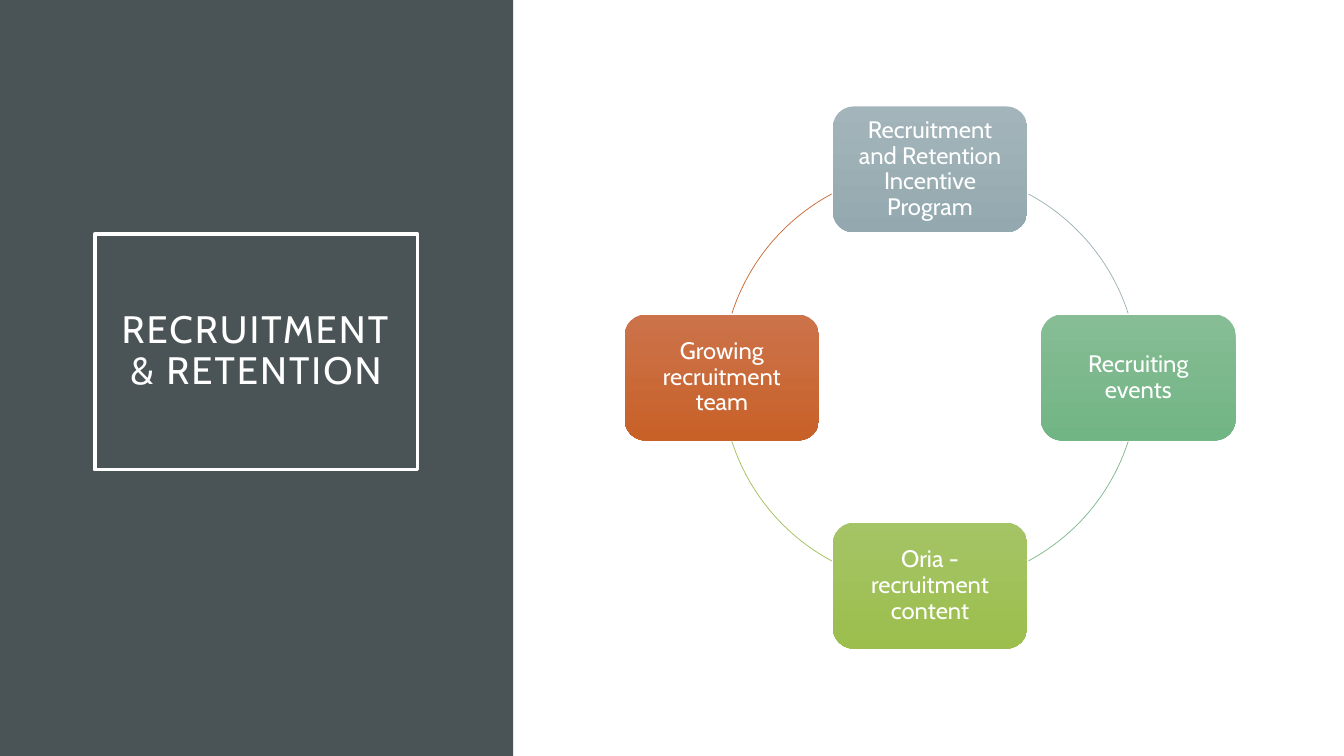
from pptx import Presentation
from pptx.dml.color import RGBColor
from pptx.enum.shapes import MSO_SHAPE
from pptx.enum.text import MSO_ANCHOR, MSO_AUTO_SIZE, PP_ALIGN
from pptx.oxml.ns import qn
from pptx.util import Inches, Pt


def color(value):
    return RGBColor.from_string(value)


def write(shape, text, size, inset):
    frame = shape.text_frame
    frame.text = text
    frame.word_wrap = True
    frame.auto_size = MSO_AUTO_SIZE.NONE
    frame.vertical_anchor = MSO_ANCHOR.MIDDLE
    frame.margin_left = frame.margin_right = Inches(inset)
    frame.margin_top = frame.margin_bottom = Inches(inset)
    para = frame.paragraphs[0]
    para.alignment = PP_ALIGN.CENTER
    para.line_spacing = 0.9
    font = para.runs[0].font
    font.name = "Cabin"
    font.size = Pt(size)
    font.color.rgb = color("FFFFFF")


deck = Presentation()
deck.slide_width = Inches(13.33)
deck.slide_height = Inches(7.5)
page = deck.slides.add_slide(deck.slide_layouts[5])
shapes = page.shapes

panel = shapes.add_shape(MSO_SHAPE.RECTANGLE, 0, 0, Inches(5.09), Inches(7.5))
panel.shadow.inherit = False
panel.fill.solid()
panel.fill.fore_color.rgb = color("4A5356")
panel.line.fill.background()

center_x, center_y, radius = 9.225, 3.745, 2.065
card_width, card_height = 1.93, 1.25
cycle = [
    ("Recruitment and Retention Incentive Program", 0, -1, "A3B5BB", "93A9AF", "9BAFB5", 298.2, 342.1),
    ("Recruiting events", 1, 0, "86BD95", "72B584", "7BB88C", 17.9, 61.8),
    ("Oria - recruitment content", 0, 1, "A5C466", "9BBE4D", "9FC057", 118.2, 162.1),
    ("Growing recruitment team", -1, 0, "CC734B", "C86128", "C96731", 197.9, 241.8),
]
for text, across, down, top_color, bottom_color, arc_color, start, end in cycle:
    card = shapes.add_shape(
        MSO_SHAPE.ROUNDED_RECTANGLE,
        Inches(center_x + across * radius - card_width / 2),
        Inches(center_y + down * radius - card_height / 2),
        Inches(card_width),
        Inches(card_height),
    )
    card.shadow.inherit = False
    card.fill.gradient()
    card.fill.gradient_angle = 270
    for stop, value in zip(card.fill.gradient_stops, (top_color, bottom_color)):
        stop.color.rgb = color(value)
    card.line.fill.background()
    write(card, text, 17, 0.13)

    arc = shapes.add_shape(
        MSO_SHAPE.ARC,
        Inches(center_x - radius),
        Inches(center_y - radius),
        Inches(2 * radius),
        Inches(2 * radius),
    )
    arc.shadow.inherit = False
    arc.adjustments[0] = start * 0.6
    arc.adjustments[1] = end * 0.6
    arc.fill.background()
    arc.line.color.rgb = color(arc_color)
    arc.line.width = Pt(0.5)

title = shapes.title
title.left, title.top = Inches(0.94), Inches(2.32)
title.width, title.height = Inches(3.2), Inches(2.34)
title.line.color.rgb = color("FFFFFF")
title.line.width = Pt(2.5)
write(title, "RECRUITMENT & RETENTION", 27.3, 0.2)
for properties in title.element.iter(qn("a:rPr")):
    properties.set("spc", "150")
title.element.getparent().append(title.element)

deck.save("out.pptx")
